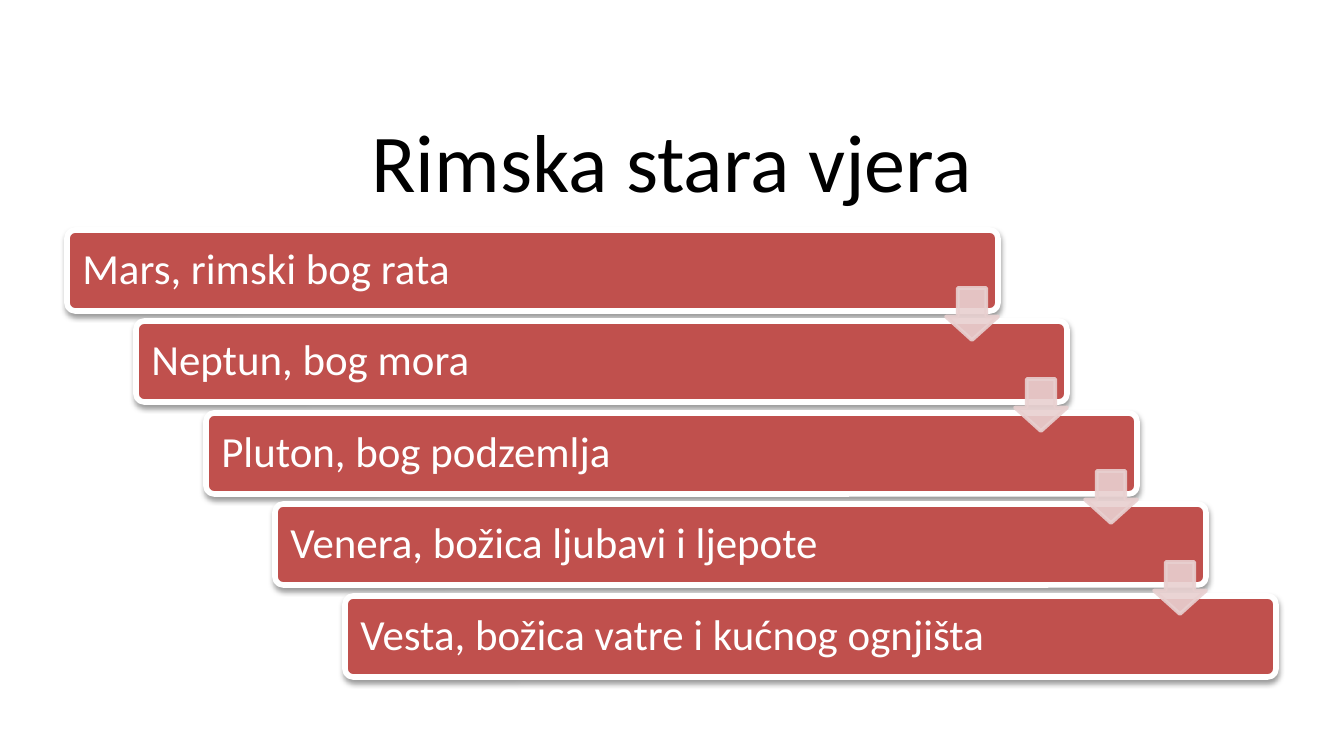
from dataclasses import dataclass

from lxml.etree import SubElement
from pptx import Presentation
from pptx.dml.color import RGBColor
from pptx.enum.shapes import MSO_SHAPE
from pptx.enum.text import MSO_ANCHOR, PP_ALIGN
from pptx.oxml.ns import qn
from pptx.util import Emu, Pt

EMU_PER_PX = 914400 / 134.4


@dataclass(frozen=True)
class Theme:
    font: str = "Calibri"
    title_size: int = 44
    bar_size: int = 23
    ink: str = "000000"
    paper: str = "FFFFFF"
    bar: str = "C0504D"
    arrow: str = "E8D0D0"


THEME = Theme()
GODS = [
    "Mars, rimski bog rata",
    "Neptun, bog mora",
    "Pluton, bog podzemlja",
    "Venera, božica ljubavi i ljepote",
    "Vesta, božica vatre i kućnog ognjišta",
]
FIRST_LEFT, FIRST_TOP = 67, 230
BAR_WIDTH, BAR_HEIGHT = 931, 81
STAIR_WIDTH, STAIR_HEIGHT = 278, 366
ARROW_SIZE, ARROW_DROP = 52, 58


def px(length):
    return Emu(round(length * EMU_PER_PX))


def box(*lengths):
    return [px(length) for length in lengths]


def write(frame, text, size, color, align):
    frame.word_wrap = True
    frame.vertical_anchor = MSO_ANCHOR.MIDDLE
    paragraph = frame.paragraphs[0]
    paragraph.alignment = align
    paragraph.line_spacing = 0.9
    run = paragraph.add_run()
    run.text = text
    run.font.name = THEME.font
    run.font.size = Pt(size)
    run.font.color.rgb = RGBColor.from_string(color)


def paint(shape, fill, line, line_width):
    shape.shadow.inherit = False
    shape.fill.solid()
    shape.fill.fore_color.rgb = RGBColor.from_string(fill)
    shape.line.color.rgb = RGBColor.from_string(line)
    shape.line.width = Pt(line_width)


def set_alpha(color, percent):
    SubElement(color, qn("a:alpha"), val=str(percent * 1000))


def drop_shadow(shape):
    """Add a soft shadow straight below the shape."""
    effects = shape._element.spPr.find(qn("a:effectLst"))
    shadow = SubElement(effects, qn("a:outerShdw"), blurRad="40000",
                        dist="20000", dir="5400000", rotWithShape="0")
    set_alpha(SubElement(shadow, qn("a:srgbClr"), val=THEME.ink), 38)


def add_title(slide, text):
    title = slide.shapes.add_textbox(*box(67, 113, 1210, 105))
    write(title.text_frame, text, THEME.title_size, THEME.ink, PP_ALIGN.CENTER)


def add_bar(slide, left, top, text):
    bar = slide.shapes.add_shape(MSO_SHAPE.ROUNDED_RECTANGLE,
                                 *box(left, top, BAR_WIDTH, BAR_HEIGHT))
    bar.adjustments[0] = 0.1
    paint(bar, THEME.bar, THEME.paper, 3)
    drop_shadow(bar)
    frame = bar.text_frame
    frame.margin_left = frame.margin_right = px(13)
    frame.margin_top = frame.margin_bottom = px(13)
    write(frame, text, THEME.bar_size, THEME.paper, PP_ALIGN.LEFT)


def add_arrow(slide, left, top):
    arrow = slide.shapes.add_shape(MSO_SHAPE.DOWN_ARROW,
                                   *box(left, top, ARROW_SIZE, ARROW_SIZE))
    arrow.adjustments[0] = 0.55
    arrow.adjustments[1] = 0.45
    paint(arrow, THEME.arrow, THEME.arrow, 2)
    for color in arrow._element.spPr.iter(qn("a:srgbClr")):
        set_alpha(color, 90)


def main():
    prs = Presentation()
    prs.slide_width, prs.slide_height = box(1344, 756)
    slide = prs.slides.add_slide(prs.slide_layouts[6])
    add_title(slide, "Rimska stara vjera")

    steps = len(GODS) - 1
    corners = [(FIRST_LEFT + STAIR_WIDTH * i // steps,
                FIRST_TOP + STAIR_HEIGHT * i // steps)
               for i in range(len(GODS))]
    for (left, top), god in zip(corners, GODS):
        add_bar(slide, left, top, god)
    for left, top in corners[:-1]:
        add_arrow(slide, left + BAR_WIDTH - ARROW_SIZE, top + ARROW_DROP)

    prs.save("out.pptx")


if __name__ == "__main__":
    main()
